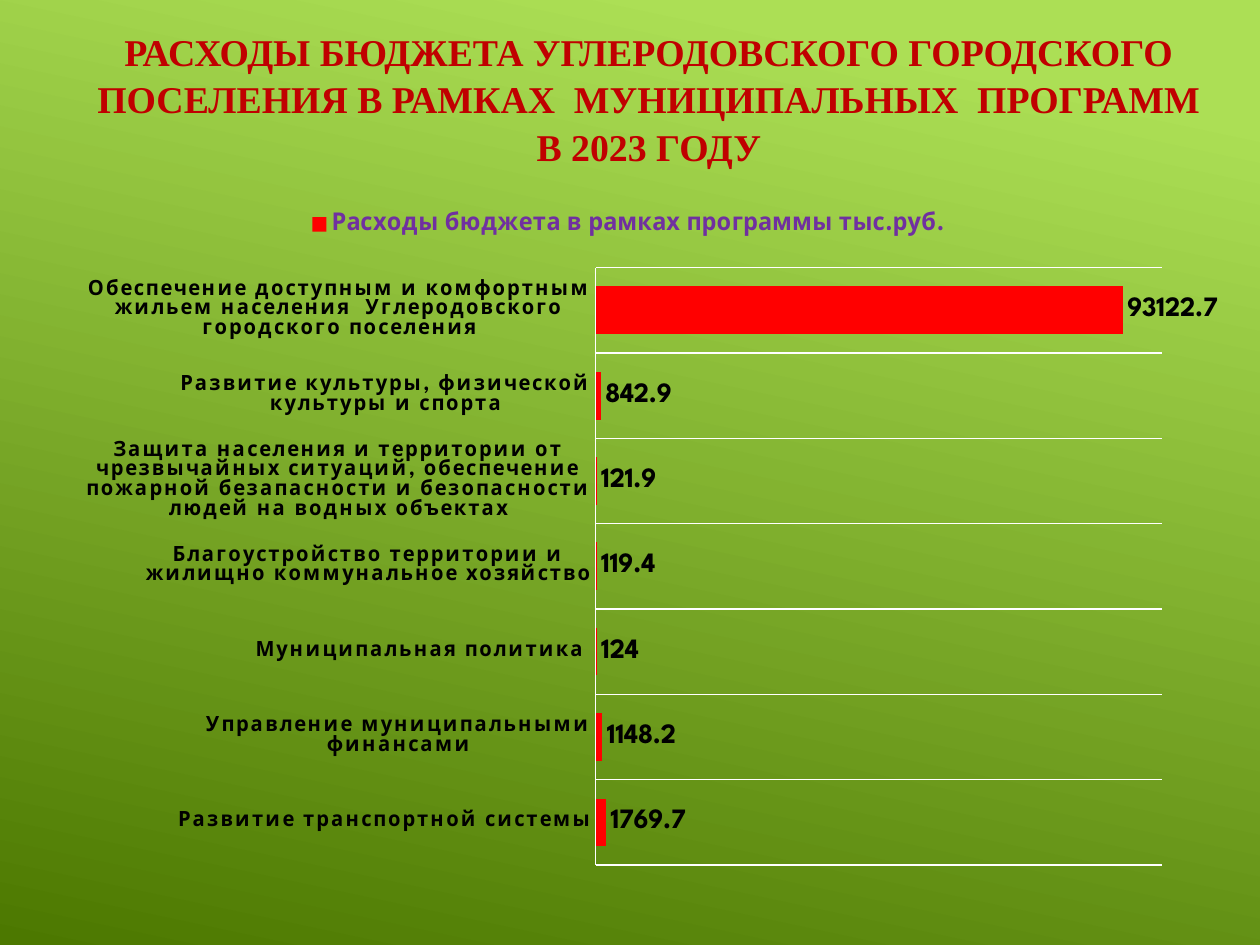
from dataclasses import dataclass
from lxml import etree
from pptx import Presentation
from pptx import util as u
from pptx.chart import data as cd
from pptx.dml.color import RGBColor
from pptx.enum import chart as ch, text
from pptx.oxml.ns import qn


@dataclass(frozen=True)
class Theme:
    light: str = "ACDF55"
    dark: str = "4C7800"
    title: str = "C00000"
    legend: str = "7030A0"
    bar: str = "FF0000"
    line: str = "FFFFFF"
    ink: str = "000000"
    serif: str = "Times New Roman"
    sans: str = "League Spartan"
    head: float = 21.6
    key: int = 14
    label: int = 12
    value: int = 16


TITLE = ("РАСХОДЫ БЮДЖЕТА УГЛЕРОДОВСКОГО ГОРОДСКОГО ПОСЕЛЕНИЯ "
         "В РАМКАХ  МУНИЦИПАЛЬНЫХ  ПРОГРАММ В 2023 ГОДУ")
SERIES = "Расходы бюджета в рамках программы тыс.руб."
COSTS = {
    "Развитие транспортной системы": 1769.7,
    "Управление муниципальными финансами": 1148.2,
    "Муниципальная политика ": 124,
    "Благоустройство территории и жилищно коммунальное хозяйство": 119.4,
    "Защита населения и территории от чрезвычайных ситуаций, обеспечение "
    "пожарной безапасности и безопасности людей на водных объектах": 121.9,
    "Развитие культуры, физической культуры и спорта": 842.9,
    "Обеспечение доступным и комфортным жильем населения  "
    "Углеродовского городского поселения": 93122.7,
}


class Deck:
    def __init__(self, theme):
        self.theme = theme
        self.prs = Presentation()
        self.prs.slide_width, self.prs.slide_height = u.Inches(10), u.Inches(7.5)
        self.slide = self.prs.slides.add_slide(self.prs.slide_layouts[6])

    def back(self, angle):
        fill = self.slide.background.fill
        fill.gradient()
        fill.gradient_angle = 360 - angle
        stops = zip(fill.gradient_stops, (0.1, 1), (self.theme.light, self.theme.dark))
        for stop, place, color in stops:
            stop.position = place
            stop.color.rgb = RGBColor.from_string(color)

    def font(self, font, size, color, face):
        font.size, font.bold, font.name = u.Pt(size), True, face
        font.color.rgb = RGBColor.from_string(color)

    def title(self, words, *box):
        frame = self.slide.shapes.add_textbox(*map(u.Inches, box)).text_frame
        frame.word_wrap = True
        frame.vertical_anchor = text.MSO_ANCHOR.MIDDLE
        frame.text = words
        para = frame.paragraphs[0]
        para.alignment = text.PP_ALIGN.CENTER
        para.line_spacing = 1.05
        self.font(para.runs[0].font, self.theme.head, self.theme.title, self.theme.serif)

    def rule(self, line):
        line.color.rgb = RGBColor.from_string(self.theme.line)
        line.width = u.Pt(0.75)

    def place(self, chart, *box):
        area = chart._chartSpace.chart.plotArea
        for old in area.findall(qn("c:layout")):
            area.remove(old)
        layout = etree.Element(qn("c:layout"))
        area.insert(0, layout)
        manual = etree.SubElement(layout, qn("c:manualLayout"))
        tags = ("layoutTarget", "xMode", "yMode", "x", "y", "w", "h")
        for tag, val in zip(tags, ("inner", "edge", "edge", *box)):
            etree.SubElement(manual, qn("c:" + tag)).set("val", str(val))

    def bars(self, name, costs, *box):
        look = self.theme
        data = cd.CategoryChartData()
        data.categories = list(costs)
        data.add_series(name, list(costs.values()))
        chart = self.slide.shapes.add_chart(
            ch.XL_CHART_TYPE.BAR_CLUSTERED, *map(u.Inches, box), data).chart
        chart.has_title = False
        chart.font.name, chart.font.size = look.sans, u.Pt(10)
        self.place(chart, 0.47, 0.1, 0.52, 0.87)

        chart.has_legend = True
        chart.legend.position = ch.XL_LEGEND_POSITION.TOP
        chart.legend.include_in_layout = False
        self.font(chart.legend.font, look.key, look.legend, look.sans)

        axis = chart.category_axis
        axis.major_tick_mark = axis.minor_tick_mark = ch.XL_TICK_MARK.NONE
        axis.has_major_gridlines = True
        self.rule(axis.format.line)
        self.rule(axis.major_gridlines.format.line)
        self.font(axis.tick_labels.font, look.label, look.ink, look.sans)
        axis._element.find(".//" + qn("a:defRPr")).set("spc", "120")

        scale = chart.value_axis
        scale.visible = scale.has_major_gridlines = False
        scale.minimum_scale, scale.maximum_scale = 0, 100000

        plot = chart.plots[0]
        plot.gap_width, plot.vary_by_categories = 79, False
        fill = plot.series[0].format.fill
        fill.solid()
        fill.fore_color.rgb = RGBColor.from_string(look.bar)
        tags = plot.series[0].data_labels
        tags.show_value = True
        tags.position = ch.XL_LABEL_POSITION.OUTSIDE_END
        self.font(tags.font, look.value, look.ink, look.sans)


def main():
    deck = Deck(Theme())
    deck.back(102)
    deck.title(TITLE, 0.58, 0.33, 9.14, 0.89)
    deck.bars(SERIES, COSTS, 0.67, 1.58, 9, 5.45)
    deck.prs.save("out.pptx")


if __name__ == "__main__":
    main()
